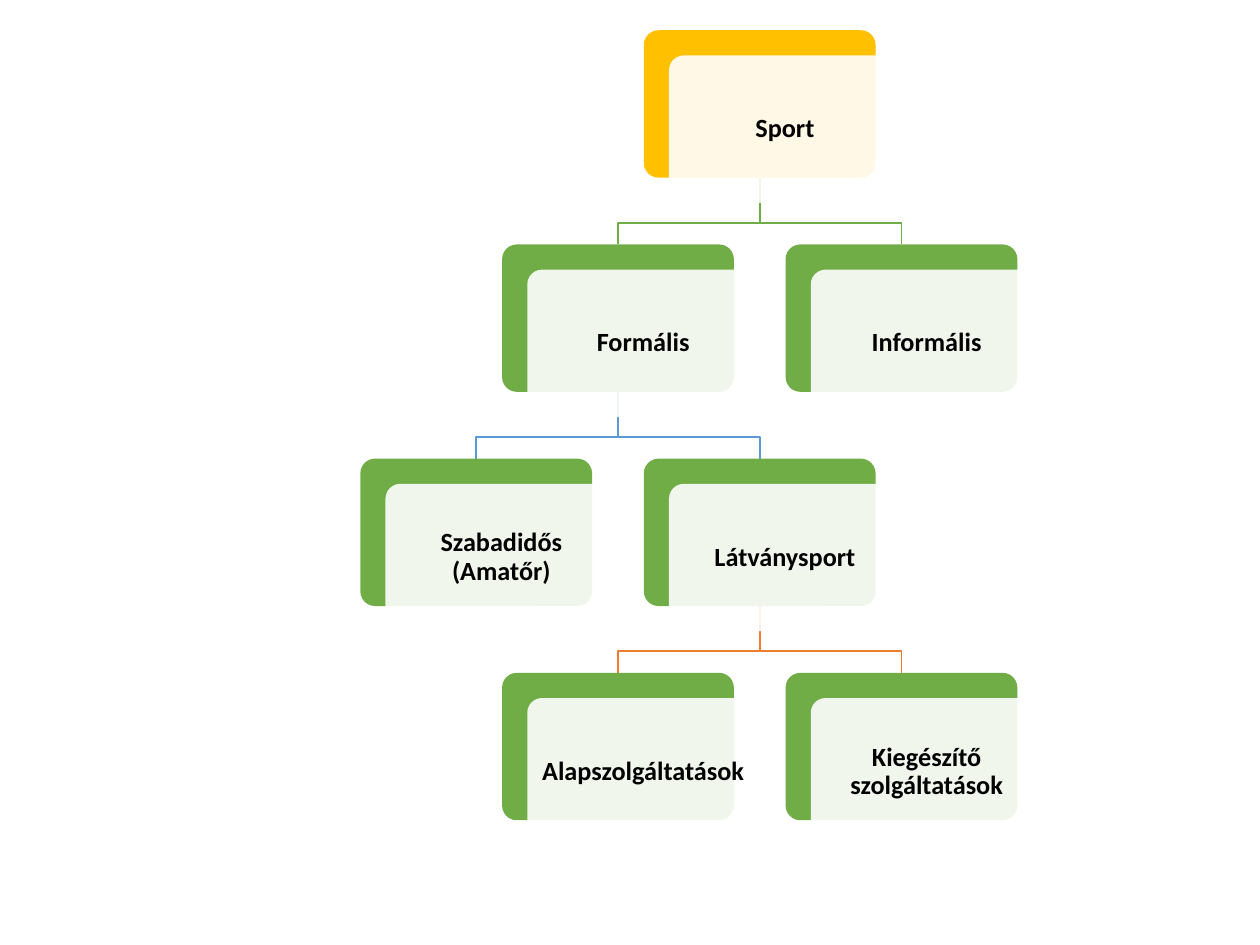
from lxml.etree import SubElement
from pptx import Presentation
from pptx.dml.color import RGBColor
from pptx.enum.shapes import MSO_SHAPE
from pptx.enum.text import MSO_ANCHOR, PP_ALIGN
from pptx.oxml.ns import qn
from pptx.util import Inches, Pt

COLORS = {
    "gold": "FFC000",
    "green": "70AD47",
    "blue": "5B9BD5",
    "orange": "ED7D31",
    "white": "FFFFFF",
    "black": "000000",
}
LEFT, TOP = 2.86, 0.24
COL_STEP, ROW_STEP = 1.125, 1.7
CARD_W, CARD_H = 1.84, 1.17
OFFSET = 0.2
ELBOW_DROP = 0.36

NODES = {
    "Sport": (2, 0, "gold"),
    "Formális": (1, 1, "green"),
    "Informális": (3, 1, "green"),
    "Szabadidős (Amatőr)": (0, 2, "green"),
    "Látványsport": (2, 2, "green"),
    "Alapszolgáltatások": (1, 3, "green"),
    "Kiegészítő szolgáltatások": (3, 3, "green"),
}
BRANCHES = [
    ("Sport", ["Formális", "Informális"], "green"),
    ("Formális", ["Szabadidős (Amatőr)", "Látványsport"], "blue"),
    ("Látványsport", ["Alapszolgáltatások", "Kiegészítő szolgáltatások"], "orange"),
]


def rgb(name):
    return RGBColor.from_string(COLORS[name])


def position(name):
    col, row, _ = NODES[name]
    return LEFT + col * COL_STEP, TOP + row * ROW_STEP


def add_elbow(s, parent, child, color):
    (px, py), (cx, cy) = position(parent), position(child)
    x1, y1 = px + CARD_W / 2, py + CARD_H
    x2, mid = cx + CARD_W / 2, y1 + ELBOW_DROP
    points = [(Inches(x), Inches(y)) for x, y in [(x1, mid), (x2, mid), (x2, cy)]]
    builder = s.shapes.build_freeform(Inches(x1), Inches(y1))
    builder.add_line_segments(points, close=False)
    sp = builder.convert_to_shape()
    sp.shadow.inherit = False
    sp.fill.background()
    sp.line.color.rgb = rgb(color)
    sp.line.width = Pt(1)


def add_card(s, x, y, color, alpha=None):
    sp = s.shapes.add_shape(MSO_SHAPE.ROUNDED_RECTANGLE, Inches(x), Inches(y),
                            Inches(CARD_W), Inches(CARD_H))
    sp.adjustments[0] = 0.1
    sp.shadow.inherit = False
    sp.fill.solid()
    sp.fill.fore_color.rgb = rgb(color)
    sp.line.fill.background()
    if alpha:
        fill_color = sp.fill._xPr.find(qn("a:solidFill"))[0]
        SubElement(fill_color, qn("a:alpha"), val=str(alpha * 1000))
    return sp


def add_node(s, name):
    x, y = position(name)
    add_card(s, x, y, NODES[name][2])
    tf = add_card(s, x + OFFSET, y + OFFSET, "white", alpha=90).text_frame
    tf.word_wrap = True
    tf.vertical_anchor = MSO_ANCHOR.MIDDLE
    tf.margin_left = tf.margin_right = tf.margin_top = tf.margin_bottom = Inches(0.06)
    p = tf.paragraphs[0]
    p.text = name
    p.alignment = PP_ALIGN.CENTER
    p.line_spacing = 0.9
    p.font.name = "Calibri"
    p.font.size = Pt(15)
    p.font.bold = True
    p.font.color.rgb = rgb("black")


def main():
    prs = Presentation()
    prs.slide_width, prs.slide_height = Inches(10), Inches(7.5)
    s = prs.slides.add_slide(prs.slide_layouts[6])
    for parent, children, color in BRANCHES:
        for child in children:
            add_elbow(s, parent, child, color)
    for name in NODES:
        add_node(s, name)
    prs.save("out.pptx")


if __name__ == "__main__":
    main()
